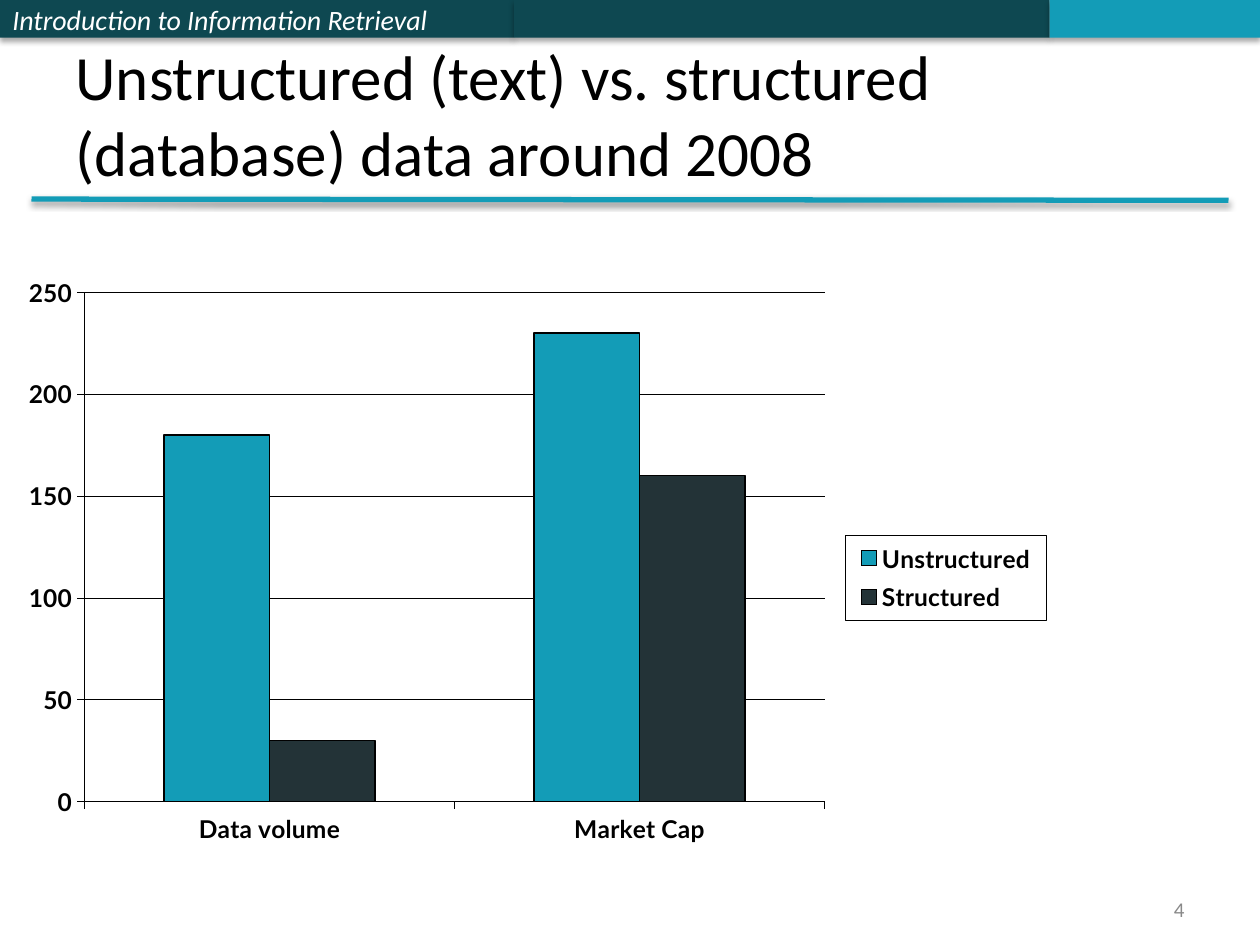
from dataclasses import dataclass

import pptx
import pptx.chart.data
import pptx.dml.color
import pptx.enum.chart
import pptx.enum.shapes
import pptx.enum.text
import pptx.oxml
import pptx.oxml.ns
import pptx.util
from lxml import etree

Inches = pptx.util.Inches
Pt = pptx.util.Pt
RGBColor = pptx.dml.color.RGBColor
Align = pptx.enum.text.PP_ALIGN
Anchor = pptx.enum.text.MSO_ANCHOR

BLACK = RGBColor(0x00, 0x00, 0x00)
WHITE = RGBColor(0xFF, 0xFF, 0xFF)
GRAY = RGBColor(0x89, 0x89, 0x89)
DARK_TEAL = RGBColor(0x0E, 0x48, 0x51)
TEAL = RGBColor(0x13, 0x9C, 0xB7)
CHARCOAL = RGBColor(0x23, 0x33, 0x37)

CHART_FONT = {"name": "Lato", "size": Pt(14), "bold": True}


@dataclass
class Band:
    left: float
    width: float
    color: RGBColor
    text: str = ""


@dataclass
class Series:
    name: str
    values: tuple
    color: RGBColor


BANDS = [
    Band(0, 4.08, DARK_TEAL, "Introduction to Information Retrieval"),
    Band(4.08, 4.25, DARK_TEAL),
    Band(8.33, 1.67, TEAL),
]
CATEGORIES = ["Data volume", "Market Cap"]
SERIES = [
    Series("Unstructured", (180, 230), TEAL),
    Series("Structured", (30, 160), CHARCOAL),
]


def format_font(font, color: RGBColor, values: dict) -> None:
    for name, value in values.items():
        setattr(font, name, value)
    font.color.rgb = color


def format_line(line, color: RGBColor, width: float) -> None:
    line.color.rgb = color
    line.width = Pt(width)


def fill_text(shape, text: str, color: RGBColor, font: dict,
              align=Align.LEFT, anchor=Anchor.MIDDLE) -> None:
    frame = shape.text_frame
    frame.word_wrap = True
    frame.vertical_anchor = anchor
    paragraph = frame.paragraphs[0]
    paragraph.alignment = align
    run = paragraph.add_run()
    run.text = text
    format_font(run.font, color, font)


def add_shadow(shape, opacity: int, distance: float) -> None:
    """Give the shape a soft black shadow straight below it."""
    namespace = pptx.oxml.ns.nsdecls("a")
    shape._element.spPr.append(pptx.oxml.parse_xml(
        f'<a:effectLst {namespace}><a:outerShdw blurRad="{Pt(3.1)}" '
        f'dist="{Pt(distance)}" dir="5400000" rotWithShape="0">'
        f'<a:srgbClr val="{BLACK}"><a:alpha val="{opacity * 1000}"/>'
        '</a:srgbClr></a:outerShdw></a:effectLst>'))


def add_band(slide, band: Band) -> None:
    shape = slide.shapes.add_shape(
        pptx.enum.shapes.MSO_SHAPE.RECTANGLE,
        Inches(band.left), 0, Inches(band.width), Inches(0.3))
    shape.fill.solid()
    shape.fill.fore_color.rgb = band.color
    shape.line.fill.background()
    add_shadow(shape, 35, 1.8)
    if band.text:
        fill_text(shape, band.text, WHITE,
                  {"name": "Calibri", "size": Pt(16), "italic": True})


def add_rule(slide) -> None:
    rule = slide.shapes.add_connector(
        pptx.enum.shapes.MSO_CONNECTOR.STRAIGHT,
        Inches(0.25), Inches(1.58), Inches(9.75), Inches(1.59))
    format_line(rule.line, TEAL, 3)
    add_shadow(rule, 38, 1.6)


def add_title(slide) -> None:
    title = slide.shapes.title
    title.left, title.top = Inches(0.5), Inches(0.3)
    title.width, title.height = Inches(9), Inches(1.25)
    fill_text(title, "Unstructured (text) vs. structured (database) data around 2008",
              BLACK, {"name": "Calibri", "size": Pt(36)}, anchor=Anchor.BOTTOM)


def add_page_number(slide) -> None:
    box = slide.shapes.add_textbox(
        Inches(7.17), Inches(7.08), Inches(2.33), Inches(0.27))
    fill_text(box, "4", GRAY, {"name": "Calibri", "size": Pt(12)}, align=Align.RIGHT)


def set_layout(parent, position: int, x: float, y: float,
               width: float, height: float, inner: bool = False) -> None:
    """Place a chart part by fractions of the chart area."""
    for old in parent.findall(pptx.oxml.ns.qn("c:layout")):
        parent.remove(old)
    layout = etree.Element(pptx.oxml.ns.qn("c:layout"))
    manual = etree.SubElement(layout, pptx.oxml.ns.qn("c:manualLayout"))
    values = {"layoutTarget": "inner"} if inner else {}
    values |= {"xMode": "edge", "yMode": "edge", "x": x, "y": y, "w": width, "h": height}
    for name, value in values.items():
        etree.SubElement(manual, pptx.oxml.ns.qn(f"c:{name}"), val=str(value))
    parent.insert(position, layout)


def add_data_chart(slide) -> None:
    data = pptx.chart.data.CategoryChartData()
    data.categories = CATEGORIES
    for series in SERIES:
        data.add_series(series.name, series.values)
    chart = slide.shapes.add_chart(
        pptx.enum.chart.XL_CHART_TYPE.COLUMN_CLUSTERED,
        Inches(0), Inches(2.15), Inches(8.39), Inches(4.87), data).chart
    chart.has_title = False
    format_font(chart.font, BLACK, CHART_FONT)

    plot = chart.plots[0]
    plot.gap_width = 150
    plot.overlap = 0
    plot.vary_by_categories = False
    for drawn, series in zip(plot.series, SERIES):
        drawn.format.fill.solid()
        drawn.format.fill.fore_color.rgb = series.color
        format_line(drawn.format.line, BLACK, 0.92)

    for axis in (chart.category_axis, chart.value_axis):
        format_font(axis.tick_labels.font, BLACK, CHART_FONT)
        format_line(axis.format.line, BLACK, 0.23)
        axis.major_tick_mark = pptx.enum.chart.XL_TICK_MARK.OUTSIDE
    chart.category_axis.tick_label_position = pptx.enum.chart.XL_TICK_LABEL_POSITION.LOW
    value_axis = chart.value_axis
    value_axis.minimum_scale = 0
    value_axis.maximum_scale = 250
    value_axis.major_unit = 50
    format_line(value_axis.major_gridlines.format.line, BLACK, 0.23)

    chart.has_legend = True
    legend = chart.legend
    legend.position = pptx.enum.chart.XL_LEGEND_POSITION.RIGHT
    legend.include_in_layout = False
    format_font(legend.font, BLACK, CHART_FONT)
    border = pptx.oxml.parse_xml(
        f'<c:spPr {pptx.oxml.ns.nsdecls("c", "a")}><a:noFill/>'
        f'<a:ln w="{Pt(0.23)}"><a:solidFill><a:srgbClr val="{BLACK}"/>'
        '</a:solidFill></a:ln></c:spPr>')
    legend._element.find(pptx.oxml.ns.qn("c:txPr")).addprevious(border)
    set_layout(legend._element, 1, 0.8, 0.43, 0.19, 0.14)
    plot_area = chart._chartSpace.chart.plotArea
    set_layout(plot_area, 0, 0.08, 0.035, 0.7, 0.83, inner=True)


def main() -> None:
    presentation = pptx.Presentation()
    presentation.slide_width = Inches(10)
    presentation.slide_height = Inches(7.5)
    slide = presentation.slides.add_slide(presentation.slide_layouts[5])
    for band in BANDS:
        add_band(slide, band)
    add_rule(slide)
    add_title(slide)
    add_page_number(slide)
    add_data_chart(slide)
    presentation.save("out.pptx")


if __name__ == "__main__":
    main()
